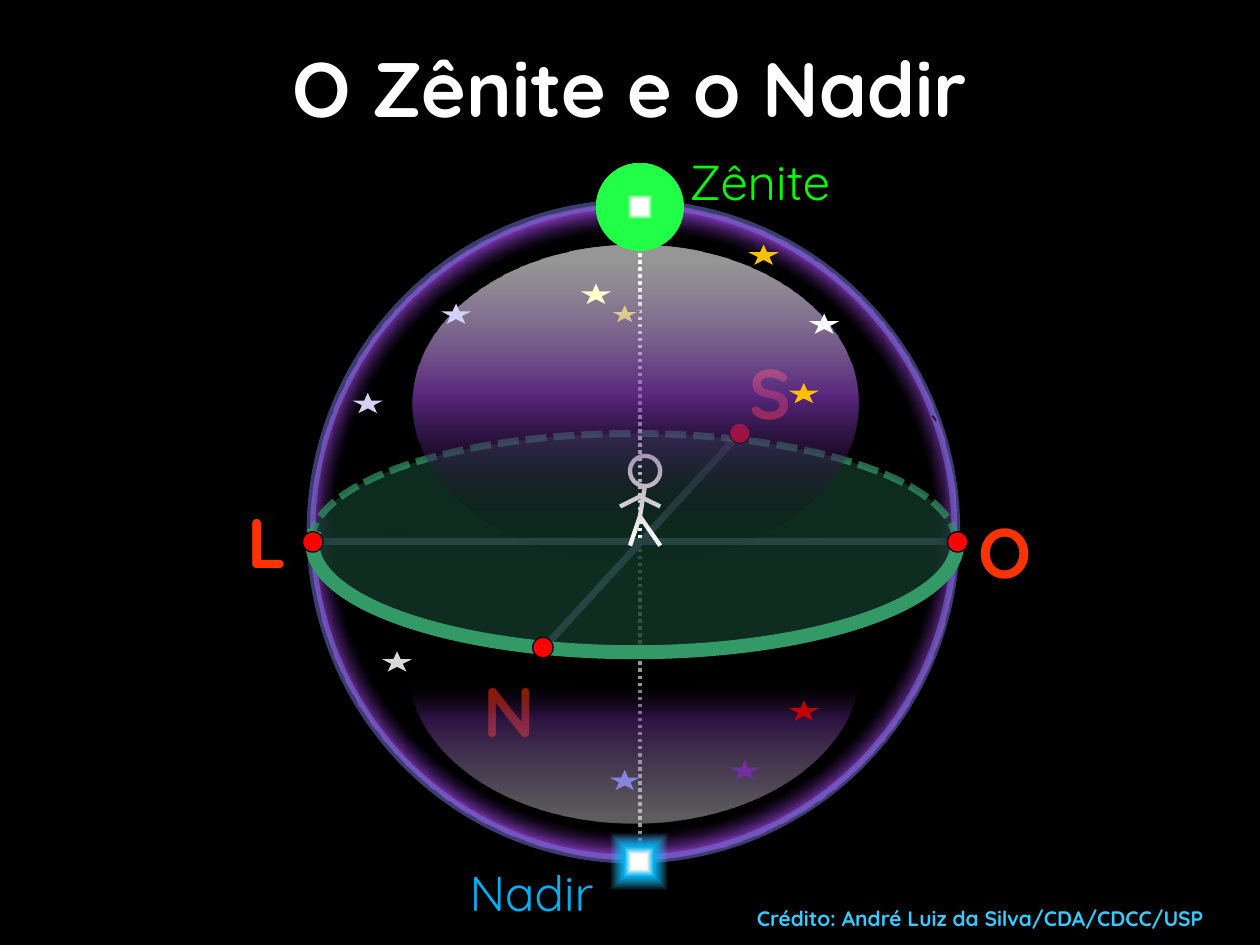
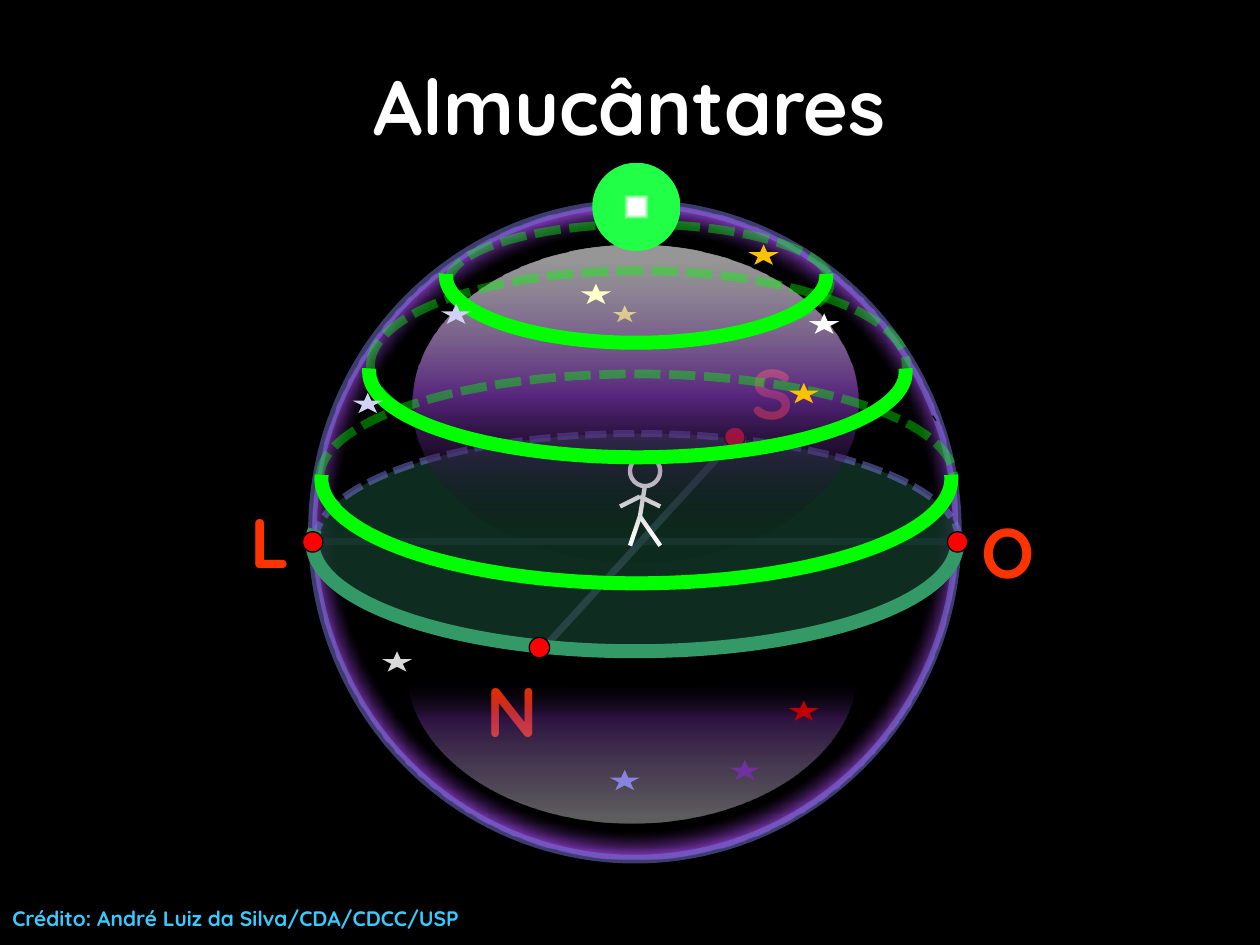
"""Build two slides on the celestial sphere: zenith and nadir, and almucantars."""
from lxml import etree
from pptx import Presentation
from pptx.dml.color import RGBColor
from pptx.enum import dml, shapes, text
from pptx.oxml.ns import qn
from pptx.util import Cm, Pt

BLACK = RGBColor(0x00, 0x00, 0x00)
WHITE = RGBColor(0xFF, 0xFF, 0xFF)
PURPLE = RGBColor(0x70, 0x30, 0xA0)
PERIWINKLE = RGBColor(0x78, 0x78, 0xDE)
LILAC = RGBColor(0xA5, 0xA5, 0xE9)
LAVENDER = RGBColor(0xD2, 0xD2, 0xF4)
STAR_BLUE = RGBColor(0x85, 0x85, 0xE0)
GROUND = RGBColor(0x14, 0x3C, 0x2B)
HORIZON_GREEN = RGBColor(0x33, 0x99, 0x66)
LIME = RGBColor(0x00, 0xFF, 0x00)
ZENITH_GREEN = RGBColor(0x21, 0xFF, 0x46)
NADIR_BLUE = RGBColor(0x00, 0xB0, 0xF0)
SKY_BLUE = RGBColor(0x37, 0xCB, 0xFF)
ORANGE = RGBColor(0xFF, 0x33, 0x00)
RED = RGBColor(0xFF, 0x00, 0x00)
DARK_RED = RGBColor(0xC0, 0x00, 0x00)
YELLOW = RGBColor(0xFF, 0xFF, 0x00)
GOLD = RGBColor(0xFF, 0xC0, 0x00)
CREAM = RGBColor(0xFF, 0xFF, 0xCC)
GREY = RGBColor(0xD9, 0xD9, 0xD9)

FONT = "Quicksand"
CREDIT = "Crédito: André Luiz da Silva/CDA/CDCC/USP"
SOLID = dml.MSO_LINE.SOLID
DOTS = dml.MSO_LINE.ROUND_DOT
DASHES = dml.MSO_LINE.SQUARE_DOT
OVAL = shapes.MSO_SHAPE.OVAL
ARC = shapes.MSO_SHAPE.ARC
STAR = shapes.MSO_SHAPE.STAR_5_POINT

RING = ("circle", [(65, BLACK, 40), (70, PURPLE, 100)])
DOME = (90, [(6, WHITE, 58), (48, PURPLE, 77), (91, BLACK, 2)])
BOWL = (0, [(3, WHITE, 37), (68, PURPLE, 41), (94, BLACK, 0)])
ZENITH_GLOW = ("shape", [(18, WHITE, 100), (28, ZENITH_GREEN, 100), (88, ZENITH_GREEN, 2)])
NADIR_GLOW = ("shape", [(17, WHITE, 100), (33, NADIR_BLUE, 100), (65, SKY_BLUE, 0)])
THIN_BLACK = (BLACK, 0.75, SOLID, 100)
CHALK = (WHITE, 2.5, SOLID, 100)
AXIS = (WHITE, 2, DOTS, 100)

OBSERVER_LIMBS = [(13, 9.8, 12.9, 10.41), (12.9, 10.41, 13.31, 11), (12.9, 10.41, 12.7, 11),
                  (12.9, 10.01, 13.31, 10.21), (12.5, 10.21, 12.9, 10.01)]
STARS = [(7.11, 7.92, LAVENDER), (8.89, 6.12, LAVENDER), (15.9, 7.72, GOLD),
         (15.09, 4.93, GOLD), (16.31, 6.32, WHITE), (11.71, 5.72, CREAM),
         (14.71, 15.32, PURPLE), (15.9, 14.12, DARK_RED), (12.29, 15.52, STAR_BLUE),
         (7.7, 13.13, GREY)]
CARDINALS = [("N", 9.5, 13.34), ("L", 4.75, 9.93), ("S", 14.86, 6.93), ("O", 19.48, 10.13)]
ALMUCANTARS_BACK = [(9.04, 4.52, 7.7, 2.36), (6.45, 7.54, 12.78, 4.17), (7.47, 5.46, 10.8, 3.81)]
ALMUCANTARS_FRONT = [(7.44, 5.77, 10.82, 3.45), (6.48, 7.54, 12.7, 4.22), (8.99, 4.22, 7.67, 2.69)]

SCENES = [
    dict(title="O Zênite e o Nadir", title_top=0.15, zenith_and_nadir=True,
         east_west=(6.32, 10.92, 19.33, 10.92), east_west_line=(LILAC, 4, SOLID, 100),
         ring_left=6.27, horizon_left=6.27, horizon_line=(HORIZON_GREEN, 4, DASHES, 70),
         front_top=8.76, letter_shift=0, south=(14.71, 8.53), north_left=10.74,
         bowl_left=11.23, zenith_left=12.01, credit=(15.01, 18.14, 10.31, 0.76)),
    dict(title="Almucântares", title_top=0.53, zenith_and_nadir=False,
         east_west=(6.38, 10.92, 19.38, 10.92), east_west_line=(PERIWINKLE, 4, SOLID, 50),
         ring_left=6.3, horizon_left=6.35, horizon_line=(PERIWINKLE, 4, DASHES, 50),
         front_top=8.74, letter_shift=0.05, south=(14.61, 8.61), north_left=10.67,
         bowl_left=11.18, zenith_left=11.94, credit=(0, 18.14, 25.4, 0.76)),
]


def draw(parent, kind, place, fill=None, line=None):
    """Add a shape, or a connector when kind is None; fill is (colour, alpha) or (direction, stops)."""
    lengths = [Cm(value) for value in place]
    if kind is None:
        item = parent.shapes.add_connector(shapes.MSO_CONNECTOR.STRAIGHT, *lengths)
    else:
        item = parent.shapes.add_shape(kind, *lengths)
    properties = item._element.spPr
    if kind is not None and fill is None:
        item.fill.background()
    elif fill and isinstance(fill[1], list):
        direction, stops = fill
        item.fill.gradient()
        gradient = properties.find(qn("a:gradFill"))
        gradient.clear()
        gradient.set("rotWithShape", "1")
        stop_list = etree.SubElement(gradient, qn("a:gsLst"))
        for position, color, alpha in stops:
            stop = etree.SubElement(stop_list, qn("a:gs"), pos=str(position * 1000))
            tint = etree.SubElement(stop, qn("a:srgbClr"), val=str(color))
            etree.SubElement(tint, qn("a:alpha"), val=str(alpha * 1000))
        if isinstance(direction, str):
            route = etree.SubElement(gradient, qn("a:path"), attrib={"path": direction})
            etree.SubElement(route, qn("a:fillToRect"), l="50000", t="50000", r="50000", b="50000")
        else:
            etree.SubElement(gradient, qn("a:lin"), ang=str(direction * 60000), scaled="0")
    elif fill:
        item.fill.solid()
        item.fill.fore_color.rgb = fill[0]
        tint = properties.find(qn("a:solidFill")).find(qn("a:srgbClr"))
        etree.SubElement(tint, qn("a:alpha"), val=str(fill[1] * 1000))
    if line:
        color, width, dash, alpha = line
        item.line.color.rgb = color
        item.line.width = Pt(width)
        item.line.dash_style = dash
        tint = next(properties.find(qn("a:ln")).iter(qn("a:srgbClr")))
        etree.SubElement(tint, qn("a:alpha"), val=str(alpha * 1000))
    else:
        item.line.fill.background()
    etree.SubElement(properties, qn("a:effectLst"))
    return item


def write(slide, words, place, size, color, bold=True, align=text.PP_ALIGN.LEFT):
    """Add one line of text in a wrapping box."""
    box = slide.shapes.add_textbox(*[Cm(value) for value in place])
    box.text_frame.word_wrap = True
    paragraph = box.text_frame.paragraphs[0]
    paragraph.text = words
    paragraph.alignment = align
    paragraph.font.name = FONT
    paragraph.font.size = Pt(size)
    paragraph.font.bold = bold
    paragraph.font.color.rgb = color
    return box


deck = Presentation()
deck.slide_width, deck.slide_height = Cm(25.4), Cm(19.05)

for scene in SCENES:
    slide = deck.slides.add_slide(deck.slide_layouts[6])
    slide.background.fill.solid()
    slide.background.fill.fore_color.rgb = BLACK
    zenith_and_nadir = scene["zenith_and_nadir"]

    if zenith_and_nadir:
        draw(slide, None, (12.9, 10.92, 12.9, 17.32), line=AXIS)
    draw(slide, None, (10.9, 13.13, 14.91, 8.74), line=(LILAC, 4, SOLID, 100))
    draw(slide, None, scene["east_west"], line=scene["east_west_line"])
    draw(slide, OVAL, (scene["ring_left"], 4.11, 13, 13.21), RING, (PERIWINKLE, 5, SOLID, 50))
    for letter, left, top in CARDINALS:
        label = write(slide, letter, (left + scene["letter_shift"], top, 0.99, 1.96), 40, ORANGE)
        if zenith_and_nadir and letter == "N":
            slide.shapes._spTree.insert(2, label._element)
    draw(slide, OVAL, (scene["horizon_left"], 8.74, 13, 4.39), (GROUND, 73), scene["horizon_line"])
    if zenith_and_nadir:
        draw(slide, None, (12.9, 4.11, 12.9, 10.92), line=AXIS)
    horizon_front = draw(slide, ARC, (6.3, scene["front_top"], 13, 4.39), (GROUND, 7),
                         (HORIZON_GREEN, 8, SOLID, 100))
    horizon_front.adjustments[0] = 359.3 * 0.6
    horizon_front.adjustments[1] = 182.3 * 0.6

    draw(slide, STAR, (12.29, 6.12, 0.61, 0.41), (YELLOW, 100), THIN_BLACK)
    observer = slide.shapes.add_group_shape()
    draw(observer, OVAL, (12.7, 9.19, 0.61, 0.61), line=CHALK)
    for limb in OBSERVER_LIMBS:
        draw(observer, None, limb, line=CHALK)
    for left, top in [(6.1, 10.72), scene["south"], (scene["north_left"], 12.85), (19.1, 10.72)]:
        draw(slide, OVAL, (left, top, 0.41, 0.41), (RED, 100), THIN_BLACK)

    draw(slide, OVAL, (8.31, 4.93, 8.99, 6.4), DOME)
    bowl = draw(slide, shapes.MSO_SHAPE.MOON, (scene["bowl_left"], 10.49, 3.12, 9.09), BOWL)
    bowl.adjustments[0] = 0.875
    bowl.rotation = 270

    if not zenith_and_nadir:
        for place in ALMUCANTARS_BACK:
            draw(slide, OVAL, place, line=(LIME, 5, DASHES, 40))
        for place in ALMUCANTARS_FRONT:
            almucantar = draw(slide, ARC, place, line=(LIME, 8, SOLID, 100))
            almucantar.adjustments[0] = 359.3 * 0.6
            almucantar.adjustments[1] = 180.7 * 0.6
    draw(slide, None, (18.8, 8.38, 18.87, 8.48), line=THIN_BLACK)

    constellation = slide.shapes.add_group_shape()
    for left, top, color in STARS:
        draw(constellation, STAR, (left, top, 0.61, 0.41), (color, 100))

    draw(slide, OVAL, (scene["zenith_left"], 3.28, 1.78, 1.78), ZENITH_GLOW)
    if zenith_and_nadir:
        draw(slide, OVAL, (11.99, 16.48, 1.78, 1.78), NADIR_GLOW)
        for words, left, top, color in [("Zênite", 13.13, 2.92, LIME),
                                        ("Nadir", 8.53, 17.27, NADIR_BLUE)]:
            write(slide, words, (left, top, 4.37, 1.45), 28, color, False, text.PP_ALIGN.CENTER)
    title = write(slide, scene["title"], (1.9, scene["title_top"], 21.59, 3.18), 44, WHITE,
                  align=text.PP_ALIGN.CENTER)
    title.text_frame.vertical_anchor = text.MSO_ANCHOR.MIDDLE
    write(slide, CREDIT, scene["credit"], 12, SKY_BLUE)

deck.save("out.pptx")
